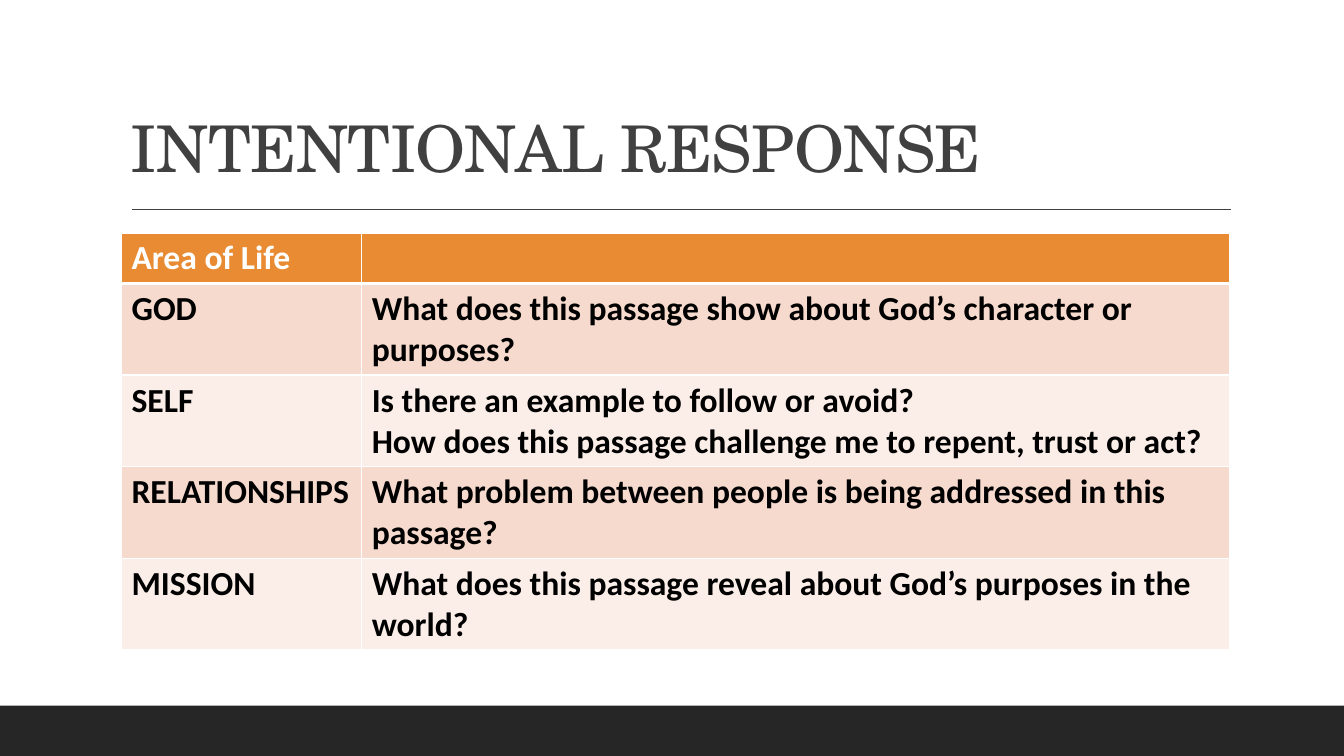
from lxml.etree import SubElement
from pptx import Presentation
from pptx.dml.color import RGBColor
from pptx.enum.shapes import MSO_CONNECTOR as CONN, MSO_SHAPE as SHAPE
from pptx.enum.text import MSO_ANCHOR as ANCHOR
from pptx.oxml.ns import qn
from pptx.util import Pt

WHITE = RGBColor(0xFF, 0xFF, 0xFF)
BLACK = RGBColor(0x00, 0x00, 0x00)
CHARCOAL = RGBColor(0x26, 0x26, 0x26)
GREY = RGBColor(0x40, 0x40, 0x40)
ORANGE = RGBColor(0xE8, 0x8B, 0x33)
BANDS = [RGBColor(0xF6, 0xDA, 0xCE), RGBColor(0xFB, 0xEE, 0xE8)]

TITLE_FONT = {"name": "TeX Gyre Schola", "size": Pt(46)}
TABLE_FONT = {"name": "Calibri", "size": Pt(24), "bold": True}

ROWS = [
    ("Area of Life", ""),
    ("GOD", "What does this passage show about God’s character or purposes?"),
    ("SELF", "Is there an example to follow or avoid?\n"
             "How does this passage challenge me to repent, trust or act?"),
    ("RELATIONSHIPS", "What problem between people is being addressed in this passage?"),
    ("MISSION", "What does this passage reveal about God’s purposes in the world?"),
]


class SlideBuilder:
    """Holds the current slide and draws each kind of element on it."""

    def __init__(self, slide):
        self.shapes = slide.shapes

    def style(self, r, fmt, color):
        for name, value in fmt.items():
            setattr(r.font, name, value)
        r.font.color.rgb = color

    def bar(self, x, y, w, h, color):
        sp = self.shapes.add_shape(SHAPE.RECTANGLE, Pt(x), Pt(y), Pt(w), Pt(h))
        sp.shadow.inherit = False
        sp.fill.solid()
        sp.fill.fore_color.rgb = color
        sp.line.fill.background()

    def rule(self, x1, x2, y, color):
        cxn = self.shapes.add_connector(CONN.STRAIGHT, Pt(x1), Pt(y), Pt(x2), Pt(y))
        cxn.line.color.rgb = color
        cxn.line.width = Pt(1)
        SubElement(cxn._element.spPr, qn("a:effectLst"))

    def title(self, x, y, w, h, text):
        tf = self.shapes.add_textbox(Pt(x), Pt(y), Pt(w), Pt(h)).text_frame
        tf.word_wrap = True
        tf.vertical_anchor = ANCHOR.BOTTOM
        p = tf.paragraphs[0]
        p.line_spacing = 0.9
        r = p.add_run()
        r.text = text
        self.style(r, TITLE_FONT, GREY)
        r._r.get_or_add_rPr().set("spc", "-50")

    def borders(self, cell, top, bottom):
        tc_pr = cell._tc.get_or_add_tcPr()
        for side, width in {"L": 1, "R": 1, "T": top, "B": bottom}.items():
            ln = SubElement(tc_pr, qn(f"a:ln{side}"), w=str(Pt(width)))
            fill = SubElement(ln, qn("a:solidFill"))
            SubElement(fill, qn("a:srgbClr"), val=str(WHITE))

    def cell(self, cell, text, fill, color):
        cell.fill.solid()
        cell.fill.fore_color.rgb = fill
        if text:
            cell.text = text
        for p in cell.text_frame.paragraphs:
            for r in p.runs:
                self.style(r, TABLE_FONT, color)

    def table(self, x, y, widths, heights, rows):
        tbl = self.shapes.add_table(len(rows), len(widths), Pt(x), Pt(y),
                                    Pt(sum(widths)), Pt(sum(heights))).table
        for col, width in zip(tbl.columns, widths):
            col.width = Pt(width)
        for i, texts in enumerate(rows):
            tbl.rows[i].height = Pt(heights[i])
            fill, color = (BANDS[(i - 1) % 2], BLACK) if i else (ORANGE, WHITE)
            for j, text in enumerate(texts):
                # A thicker line parts the header from the body
                self.borders(tbl.cell(i, j), top=3 if i == 1 else 1,
                             bottom=3 if i == 0 else 1)
                self.cell(tbl.cell(i, j), text, fill, color)


def main():
    prs = Presentation()
    prs.slide_width, prs.slide_height = Pt(960), Pt(540)
    s = SlideBuilder(prs.slides.add_slide(prs.slide_layouts[6]))

    # Footer bar and title rule
    s.bar(0, 504, 960, 36, CHARCOAL)
    s.rule(94.3, 879, 149.5, GREY)

    # Title
    s.title(86.4, 22.5, 792, 114.5, "INTENTIONAL RESPONSE")

    # Questions for each area of life
    s.table(86.8, 166.4, [171.6, 619.8], [36] + [65.5] * 4, ROWS)

    prs.save("out.pptx")


if __name__ == "__main__":
    main()
